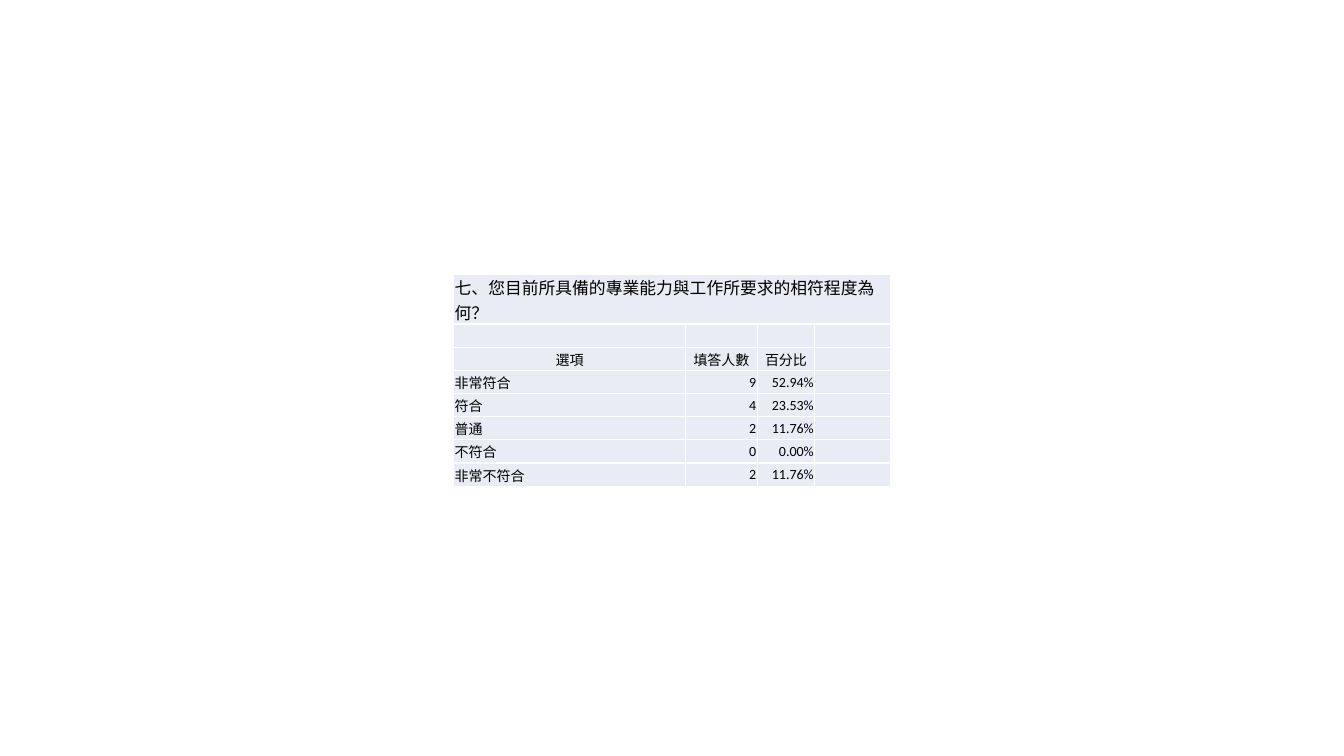
"""Build a slide with one survey result table."""
import pptx
import pptx.dml.color
import pptx.enum.text
import pptx.oxml.ns
import pptx.util
from lxml import etree

Inches = pptx.util.Inches
Pt = pptx.util.Pt
qn = pptx.oxml.ns.qn
ALIGN = pptx.enum.text.PP_ALIGN

COLORS = {"fill": "E9EBF5", "line": "FFFFFF", "text": "000000"}
FONT = "Calibri"
WIDTHS = [2.3, 0.71, 0.57, 0.75]
HEIGHT = 0.23
TITLE = "七、您目前所具備的專業能力與工作所要求的相符程度為何？"
HEADS = ["選項", "填答人數", "百分比", ""]
ANSWERS = [
    ["非常符合", "9", "52.94%", ""],
    ["符合", "4", "23.53%", ""],
    ["普通", "2", "11.76%", ""],
    ["不符合", "0", "0.00%", ""],
    ["非常不符合", "2", "11.76%", ""],
]


def border(cell):
    props = cell._tc.get_or_add_tcPr()
    for side in ("a:lnL", "a:lnR", "a:lnT", "a:lnB"):
        line = etree.SubElement(props, qn(side), w=str(Pt(1)))
        fill = etree.SubElement(line, qn("a:solidFill"))
        etree.SubElement(fill, qn("a:srgbClr"), val=COLORS["line"])


def style(cell):
    border(cell)
    cell.fill.solid()
    cell.fill.fore_color.rgb = pptx.dml.color.RGBColor.from_string(COLORS["fill"])
    cell.margin_left = cell.margin_right = cell.margin_top = Inches(0.01)
    cell.margin_bottom = 0
    cell.vertical_anchor = pptx.enum.text.MSO_ANCHOR.MIDDLE


def write(cell, text, align=ALIGN.LEFT, size=10):
    para = cell.text_frame.paragraphs[0]
    para.alignment = align
    if not text:
        etree.SubElement(para._p, qn("a:endParaRPr"), sz=str(size * 100))
        return
    para.text = text
    font = para.runs[0].font
    font.name = FONT
    font.size = Pt(size)
    font.color.rgb = pptx.dml.color.RGBColor.from_string(COLORS["text"])


def add_grid(slide, left, top):
    rows = [[TITLE, "", "", ""], [""] * 4, HEADS] + ANSWERS
    heights = [2 * HEIGHT] + [HEIGHT] * (len(rows) - 1)
    frame = slide.shapes.add_table(
        len(rows), len(WIDTHS), Inches(left), Inches(top),
        Inches(sum(WIDTHS)), Inches(sum(heights)))
    table = frame.table
    table.first_row = table.horz_banding = False
    for col, width in zip(table.columns, WIDTHS):
        col.width = Inches(width)
    for r, (texts, height) in enumerate(zip(rows, heights)):
        table.rows[r].height = Inches(height)
        for c, text in enumerate(texts):
            cell = table.cell(r, c)
            style(cell)
            if texts is HEADS:
                align = ALIGN.CENTER
            else:
                align = ALIGN.RIGHT if c else ALIGN.LEFT
            write(cell, text, align, 12 if r == 0 else 10)
    table.cell(0, 0).merge(table.cell(0, len(WIDTHS) - 1))


def main():
    deck = pptx.Presentation()
    deck.slide_width = Inches(13.33)
    deck.slide_height = Inches(7.5)
    slide = deck.slides.add_slide(deck.slide_layouts[6])
    add_grid(slide, 4.5, 2.72)
    deck.save("out.pptx")


if __name__ == "__main__":
    main()
